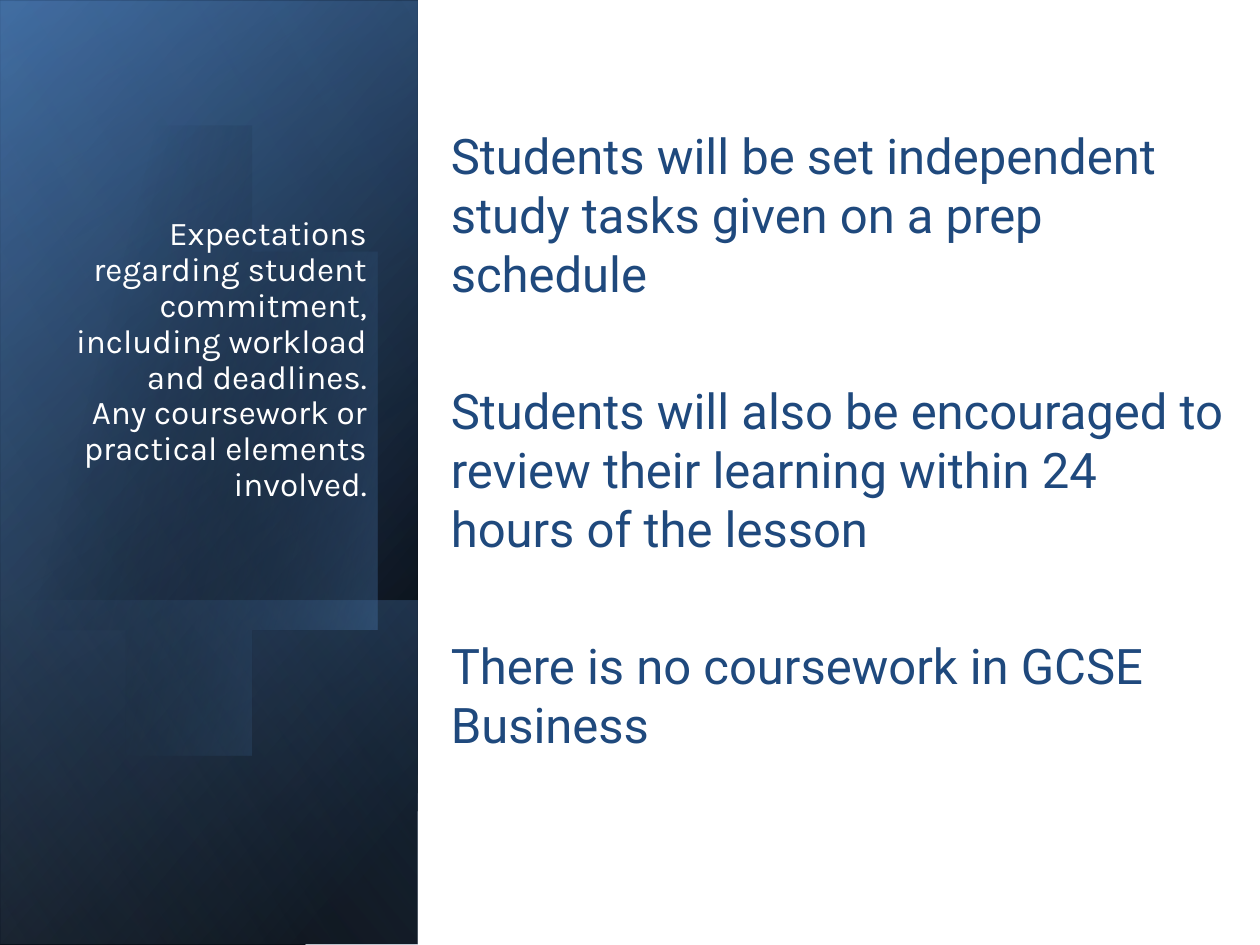
from lxml import etree
from pptx import Presentation, util as u
from pptx.dml.color import RGBColor
from pptx.enum import shapes, text
from pptx.oxml import ns

# Content
TITLE_LINES = [
    "Expectations regarding student commitment, including workload and deadlines.",
    "Any coursework or practical elements involved.",
]
BODY = [
    "Students will be set independent study tasks given on a prep schedule",
    "Students will also be encouraged to review their learning within 24 hours of the lesson",
    "There is no coursework in GCSE Business",
]

# Side panel layers, turned a quarter: left, top, width, height, stops, angle
# Each stop is position %, colour, opacity %
BASE_LAYERS = [
    (-2.09, 2.09, 7.5, 3.31, [(8, "000000", 100), (100, "376092", 100)], 50),
    (-2.09, 2.11, 7.5, 3.31, [(0, "000000", 0), (99, "4F81BD", 46)], 30),
    (0.29, 4.48, 2.74, 3.31, [(2, "4F81BD", 29), (100, "000000", 30)], 130),
]
TOP_LAYER = (-2.09, 2.08, 7.5, 3.31, [(0, "000000", 0), (99, "95B3D7", 11)], 120)

# Cut-off oval: runs of cubic curves, each as two controls and an end point
OVAL_START = (0.96, 1.14)
OVAL_RIGHT = [
    ((1.71, 1.22), (2.44, 1.92), (2.73, 2.9)),
    ((3.07, 4.12), (2.62, 5.31), (1.71, 5.57)),
    ((1.14, 5.74), (0.53, 5.5), (0.07, 5)),
]
OVAL_CUT = [(-0.03, 4.88), (-0.25, 1.66), (-0.15, 1.54)]
OVAL_LEFT = [
    ((0.02, 1.37), (0.22, 1.25), (0.45, 1.18)),
    ((0.62, 1.13), (0.79, 1.12), (0.96, 1.14)),
]
OVAL_STOPS = [(29, "000000", 0), (100, "4F81BD", 43)]
OVAL_ANGLE = 14
CURVE_STEPS = 24


def color(value):
    return RGBColor.from_string(value)


def finish(shape):
    shape.shadow.inherit = False
    shape.line.fill.background()


def fill_gradient(shape, stops, angle):
    """Linear gradient with opacity; the angle runs clockwise."""
    shape.fill.gradient()
    gradient = shape._element.spPr.find(ns.qn("a:gradFill"))
    gradient.set("rotWithShape", "1")
    for child in list(gradient):
        gradient.remove(child)
    stop_list = etree.SubElement(gradient, ns.qn("a:gsLst"))
    for position, value, opacity in stops:
        stop = etree.SubElement(stop_list, ns.qn("a:gs"), pos=str(position * 1000))
        tone = etree.SubElement(stop, ns.qn("a:srgbClr"), val=value)
        if opacity < 100:
            etree.SubElement(tone, ns.qn("a:alpha"), val=str(opacity * 1000))
    etree.SubElement(gradient, ns.qn("a:lin"), ang=str(angle * 60000), scaled="0")


def add_rectangle(page, *place):
    shape = page.shapes.add_shape(
        shapes.MSO_SHAPE.RECTANGLE, *[u.Inches(length) for length in place])
    finish(shape)
    return shape


def add_layer(page, left, top, width, height, stops, angle):
    layer = add_rectangle(page, left, top, width, height)
    layer.rotation = 90
    layer._element.spPr.xfrm.set("flipH", "1")
    fill_gradient(layer, stops, angle)


def trace(start, curves):
    """Points along a chain of cubic curves."""
    points = []
    for first, second, end in curves:
        for step in range(1, CURVE_STEPS + 1):
            t = step / CURVE_STEPS
            s = 1 - t
            points.append(tuple(
                s**3 * a + 3 * s * s * t * b + 3 * s * t * t * c + t**3 * d
                for a, b, c, d in zip(start, first, second, end)))
        start = end
    return points


def add_oval(page):
    points = trace(OVAL_START, OVAL_RIGHT) + OVAL_CUT + trace(OVAL_CUT[-1], OVAL_LEFT)
    builder = page.shapes.build_freeform(*OVAL_START, scale=u.Inches(1))
    builder.add_line_segments(points, close=True)
    oval = builder.convert_to_shape()
    finish(oval)
    fill_gradient(oval, OVAL_STOPS, OVAL_ANGLE)


def add_text(page, place, anchor, bottom_inset):
    box = page.shapes.add_textbox(*[u.Inches(length) for length in place])
    frame = box.text_frame
    frame.word_wrap = True
    frame.vertical_anchor = anchor
    frame.margin_bottom = u.Inches(bottom_inset)
    return frame


def add_run(para, words, size, font, value):
    span = para.add_run()
    span.text = words
    span.font.size = u.Pt(size)
    span.font.name = font
    span.font.color.rgb = color(value)


deck = Presentation()
deck.slide_width, deck.slide_height = u.Inches(10), u.Inches(7.5)
page = deck.slides.add_slide(deck.slide_layouts[6])

# Background and side panel
backdrop = add_rectangle(page, 0, 0, 10, 7.5)
backdrop.fill.solid()
backdrop.fill.fore_color.rgb = color("FFFFFF")
for layer in BASE_LAYERS:
    add_layer(page, *layer)
add_oval(page)
add_layer(page, *TOP_LAYER)

# Title
frame = add_text(page, (0.38, 0.64, 2.63, 3.7), text.MSO_ANCHOR.BOTTOM, 0.34)
para = frame.paragraphs[0]
para.alignment = text.PP_ALIGN.RIGHT
para.line_spacing = 0.9
for index, line in enumerate(TITLE_LINES):
    if index:
        para.add_line_break()
    add_run(para, line, 19, "Karla", "FFFFFF")

# Body
frame = add_text(page, (3.48, 0.71, 6.4, 6.07), text.MSO_ANCHOR.MIDDLE, 0.56)
for index, line in enumerate(BODY):
    para = frame.add_paragraph() if index else frame.paragraphs[0]
    if index:
        para.space_before = u.Pt(44.8)
    add_run(para, line, 28, "Roboto", "1F497D")

deck.save("out.pptx")
